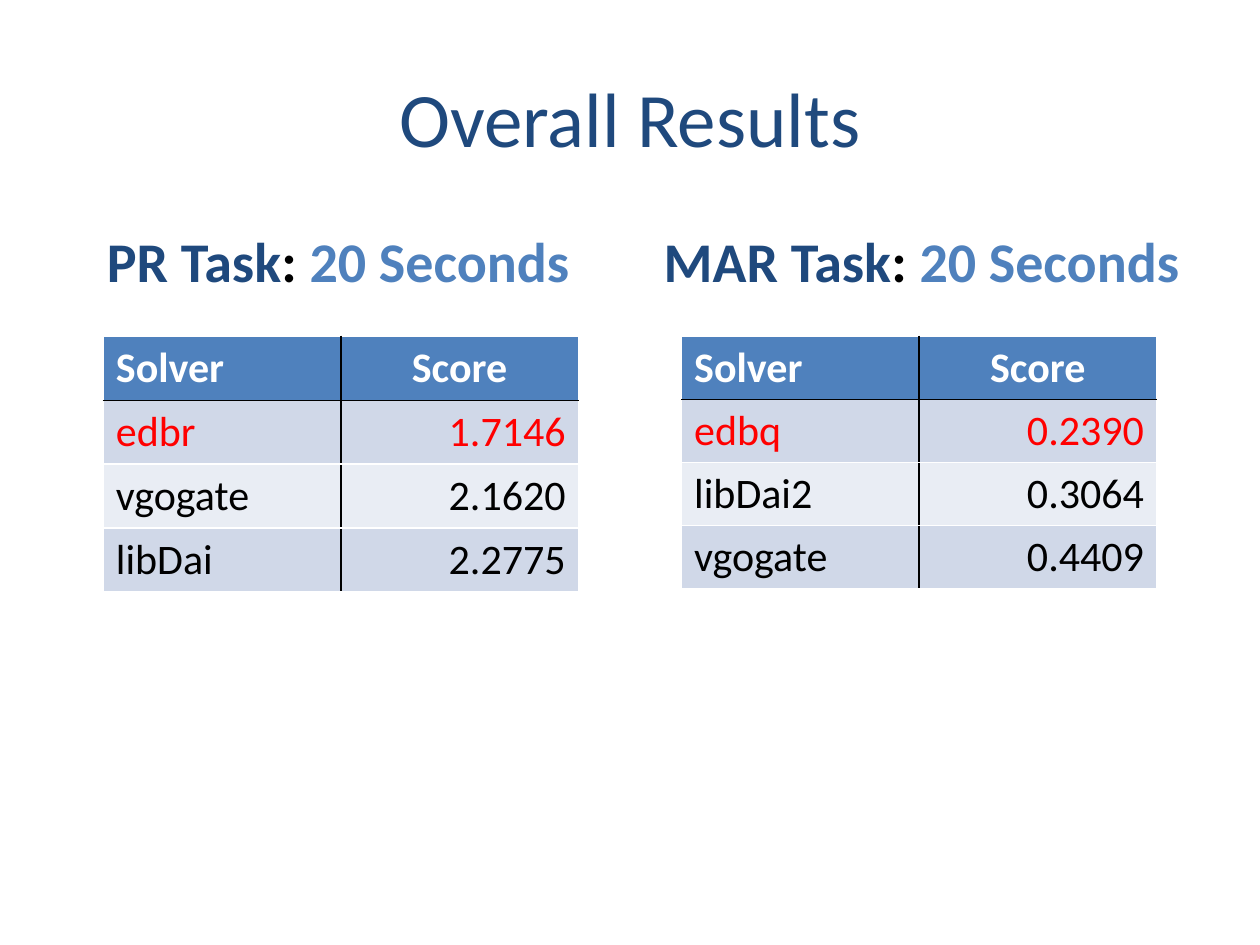
from dataclasses import dataclass

from lxml import etree
from pptx import Presentation
from pptx.dml.color import RGBColor
from pptx.enum.text import MSO_ANCHOR, PP_ALIGN
from pptx.oxml.ns import qn
from pptx.util import Inches, Pt

LEFT, CENTER, RIGHT = PP_ALIGN.LEFT, PP_ALIGN.CENTER, PP_ALIGN.RIGHT
MIDDLE = MSO_ANCHOR.MIDDLE


@dataclass(frozen=True)
class Theme:
    font: str = "Calibri"
    navy: str = "1F497D"
    blue: str = "4F81BD"
    red: str = "FF0000"
    black: str = "000000"
    white: str = "FFFFFF"
    bands: tuple = ("E9EDF4", "D0D8E8")
    title: int = 44
    head: int = 32
    cell: int = 24


THEME = Theme()

TASKS = [
    ("PR Task", (0.73, 1.75, 3.91, 0.64), (0.82, 2.67, 3.77, 2),
     [("edbr", "1.7146"), ("vgogate", "2.1620"), ("libDai", "2.2775")]),
    ("MAR Task", (5.15, 1.75, 4.33, 0.64), (5.41, 2.67, 3.77, 2),
     [("edbq", "0.2390"), ("libDai2", "0.3064"), ("vgogate", "0.4409")]),
]


def style(run, size, color, bold=False):
    font = run.font
    font.name, font.size, font.bold = THEME.font, Pt(size), bold
    font.color.rgb = RGBColor.from_string(color)


def add_title(slide, box, text):
    title = slide.shapes.title
    title.left, title.top, title.width, title.height = map(Inches, box)
    frame = title.text_frame
    frame.text = text
    frame.vertical_anchor = MIDDLE
    para = frame.paragraphs[0]
    para.alignment = CENTER
    style(para.runs[0], THEME.title, THEME.navy)


def add_head(slide, box, task):
    frame = slide.shapes.add_textbox(*map(Inches, box)).text_frame
    frame.word_wrap = False
    para = frame.paragraphs[0]
    para.alignment = CENTER
    parts = [(task, THEME.navy), (": ", THEME.black), ("20 Seconds", THEME.blue)]
    for text, color in parts:
        run = para.add_run()
        run.text = text
        style(run, THEME.head, color, True)


def set_edges(cell, edges):
    props = cell._tc.get_or_add_tcPr()
    for spot, (side, color) in enumerate(edges.items()):
        line = etree.Element(qn(f"a:ln{side}"), w=str(Pt(1)))
        fill = etree.SubElement(line, qn("a:solidFill"))
        etree.SubElement(fill, qn("a:srgbClr"), val=color)
        props.insert(spot, line)


def fill_cell(cell, text, row, col):
    head = row == 0
    cell.text = text
    para = cell.text_frame.paragraphs[0]
    para.alignment = LEFT if col == 0 else CENTER if head else RIGHT
    ink = {0: THEME.white, 1: THEME.red}.get(row, THEME.black)
    style(para.runs[0], THEME.cell, ink, head)
    cell.fill.solid()
    back = THEME.blue if head else THEME.bands[row % 2]
    cell.fill.fore_color.rgb = RGBColor.from_string(back)
    set_edges(cell, {
        "L": THEME.black if col == 1 else THEME.white,
        "R": THEME.black if col == 0 else THEME.white,
        "T": THEME.black if row == 1 else THEME.white,
        "B": THEME.black if head else THEME.white,
    })


def add_scores(slide, box, scores):
    rows = [("Solver", "Score"), *scores]
    table = slide.shapes.add_table(len(rows), 2, *map(Inches, box)).table
    for row, texts in enumerate(rows):
        for col, text in enumerate(texts):
            fill_cell(table.cell(row, col), text, row, col)


def main():
    deck = Presentation()
    deck.slide_width, deck.slide_height = Inches(10), Inches(7.5)
    slide = deck.slides.add_slide(deck.slide_layouts[5])
    add_title(slide, (0.5, 0.3, 9, 1.25), "Overall Results")
    for task, head, grid, scores in TASKS:
        add_scores(slide, grid, scores)
        add_head(slide, head, task)
    deck.save("out.pptx")


if __name__ == "__main__":
    main()
